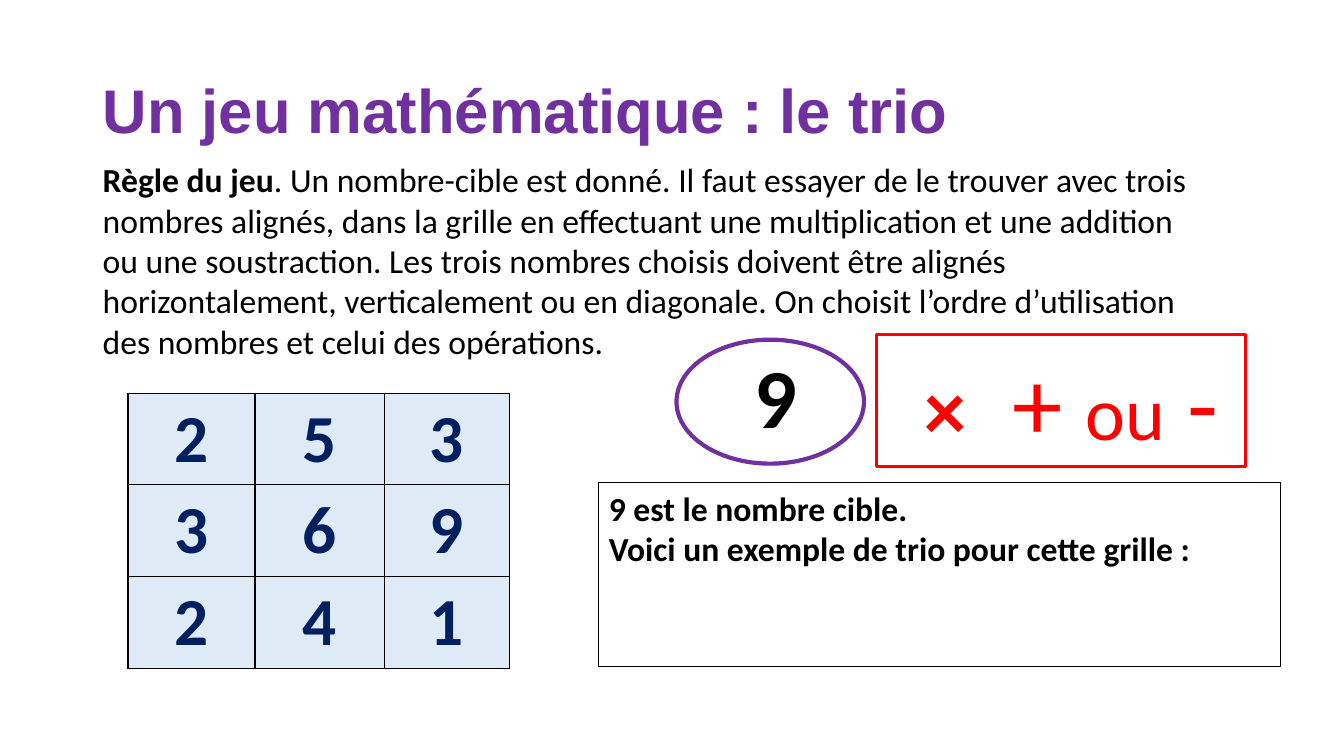
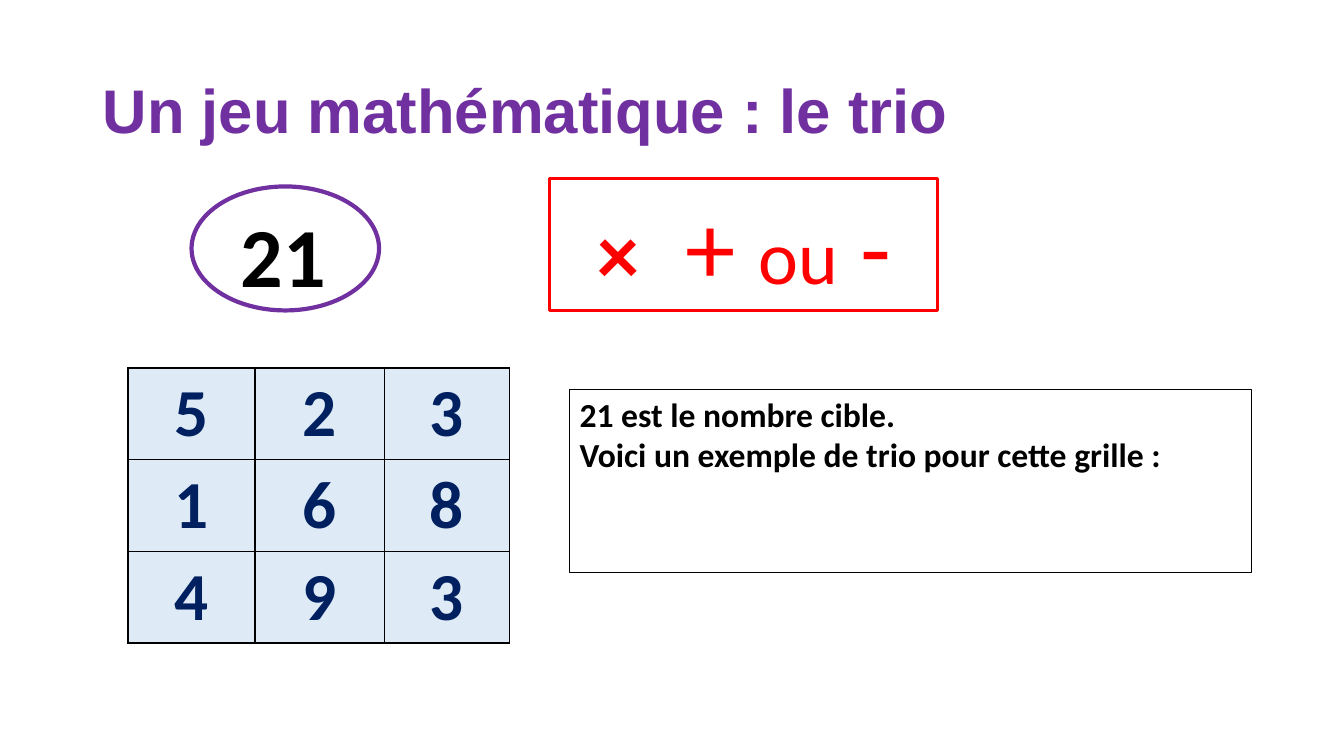
from dataclasses import dataclass

from lxml.etree import SubElement
from pptx import Presentation
from pptx.dml.color import RGBColor
from pptx.enum.shapes import MSO_SHAPE
from pptx.enum.text import MSO_ANCHOR, PP_ALIGN
from pptx.oxml.ns import qn
from pptx.util import Inches, Pt


@dataclass(frozen=True)
class Theme:
    purple: RGBColor = RGBColor(0x70, 0x30, 0xA0)
    navy: RGBColor = RGBColor(0x00, 0x20, 0x60)
    pale_blue: RGBColor = RGBColor(0xDE, 0xEB, 0xF7)
    red: RGBColor = RGBColor(0xFF, 0x00, 0x00)
    black: RGBColor = RGBColor(0x00, 0x00, 0x00)
    white: RGBColor = RGBColor(0xFF, 0xFF, 0xFF)
    title_font: str = "Arial"
    body_font: str = "Calibri"
    title_size: int = 44
    body_size: int = 24
    grid_size: int = 48
    target_size: int = 60
    times_size: int = 60
    sign_size: int = 72
    word_size: int = 54


THEME = Theme()
TITLE = "Un jeu mathématique : le trio"
RULE_NAME = "Règle du jeu"
RULE_TEXT = (
    ". Un nombre-cible est donné. Il faut essayer de le trouver avec trois "
    "nombres alignés, dans la grille en effectuant une multiplication et une "
    "addition ou une soustraction. Les trois nombres choisis doivent être "
    "alignés horizontalement, verticalement ou en diagonale. On choisit "
    "l’ordre d’utilisation des nombres et celui des opérations."
)
GRID_LEFT = 1.27
COLUMN_WIDTHS = (1.26, 1.28, 1.24)
ROW_HEIGHT = 0.91


def style(para, size, color=THEME.black, bold=False, font=THEME.body_font):
    para.font.name = font
    para.font.size = Pt(size)
    para.font.bold = bold
    para.font.color.rgb = color


def add_box(page, left, top, width, height, outline=None, line_width=0.75):
    """Add a wrapping text box, framed when an outline colour is given."""
    box = page.shapes.add_textbox(
        Inches(left), Inches(top), Inches(width), Inches(height))
    box.text_frame.word_wrap = True
    if outline is not None:
        box.line.color.rgb = outline
        box.line.width = Pt(line_width)
    return box


def add_title(page):
    frame = add_box(page, 0.92, 0.4, 11.5, 1.45).text_frame
    frame.vertical_anchor = MSO_ANCHOR.MIDDLE
    para = frame.paragraphs[0]
    para.text = TITLE
    para.line_spacing = 0.9
    style(para, THEME.title_size, THEME.purple, True, THEME.title_font)


def add_borders(cell):
    properties = cell._tc.get_or_add_tcPr()
    for position, side in enumerate(("lnL", "lnR", "lnT", "lnB")):
        line = SubElement(properties, qn(f"a:{side}"), w=str(Pt(1)))
        fill = SubElement(line, qn("a:solidFill"))
        SubElement(fill, qn("a:srgbClr"), val=str(THEME.black))
        properties.insert(position, line)


def add_grid(page, top, rows):
    table = page.shapes.add_table(
        len(rows), len(COLUMN_WIDTHS), Inches(GRID_LEFT), Inches(top),
        Inches(sum(COLUMN_WIDTHS)), Inches(ROW_HEIGHT * len(rows))).table
    table.first_row = table.horz_banding = False
    for column, width in zip(table.columns, COLUMN_WIDTHS):
        column.width = Inches(width)
    for row_index, numbers in enumerate(rows):
        table.rows[row_index].height = Inches(ROW_HEIGHT)
        for column_index, number in enumerate(numbers):
            cell = table.cell(row_index, column_index)
            cell.fill.solid()
            cell.fill.fore_color.rgb = THEME.pale_blue
            add_borders(cell)
            para = cell.text_frame.paragraphs[0]
            para.text = str(number)
            para.alignment = PP_ALIGN.CENTER
            style(para, THEME.grid_size, THEME.navy, True)


def add_example(page, left, top, target):
    frame = add_box(page, left, top, 6.76, 1.82, THEME.black).text_frame
    frame.text = (f"{target} est le nombre cible.\n"
                  "Voici un exemple de trio pour cette grille :")
    for para in frame.paragraphs:
        style(para, THEME.body_size, bold=True)


def add_target(page, oval_at, number_at, target):
    oval = page.shapes.add_shape(
        MSO_SHAPE.OVAL, *map(Inches, oval_at), Inches(1.86), Inches(1.23))
    oval.shadow.inherit = False
    oval.fill.solid()
    oval.fill.fore_color.rgb = THEME.white
    oval.line.color.rgb = THEME.purple
    oval.line.width = Pt(3)
    frame = add_box(page, *number_at, 2.13, 1.11).text_frame
    frame.margin_left = Inches(0.29)
    para = frame.paragraphs[0]
    para.text = str(target)
    style(para, THEME.target_size, bold=True)


def add_rule(page):
    para = add_box(page, 0.92, 1.53, 11.15, 2.12).text_frame.paragraphs[0]
    style(para, THEME.body_size)
    for text, bold in ((RULE_NAME, True), (RULE_TEXT, False)):
        span = para.add_run()
        span.text = text
        span.font.bold = bold


def add_operations(page, left, top, width):
    frame = add_box(page, left, top, width, 1.31, THEME.red, 2).text_frame
    frame.margin_left = Inches(0.48)
    para = frame.paragraphs[0]
    style(para, THEME.sign_size, THEME.red)
    tabs = SubElement(para._p.get_or_add_pPr(), qn("a:tabLst"))
    SubElement(tabs, qn("a:tab"), pos=str(Inches(0.87)), algn="l")
    para._p.pPr.insert(0, tabs)
    for text, size, bold in (
        ("×", THEME.times_size, True),
        ("\t+ ", THEME.sign_size, False),
        ("ou", THEME.word_size, False),
        (" -", THEME.sign_size, False),
    ):
        span = para.add_run()
        span.text = text
        span.font.size = Pt(size)
        span.font.bold = bold


def add_page(deck):
    page = deck.slides.add_slide(deck.slide_layouts[6])
    add_title(page)
    return page


def main():
    deck = Presentation()
    deck.slide_width, deck.slide_height = Inches(13.33), Inches(7.5)

    page = add_page(deck)
    add_grid(page, 3.9, ((2, 5, 3), (3, 6, 9), (2, 4, 1)))
    add_example(page, 5.94, 4.79, 9)
    add_target(page, (6.71, 3.37), (7.19, 3.37), 9)
    add_rule(page)
    add_operations(page, 8.69, 3.32, 3.66)

    page = add_page(deck)
    add_grid(page, 3.65, ((5, 2, 3), (1, 6, 8), (4, 9, 3)))
    add_example(page, 5.65, 3.86, 21)
    add_target(page, (1.9, 1.85), (2.1, 1.97), 21)
    add_operations(page, 5.45, 1.77, 3.85)

    deck.save("out.pptx")


if __name__ == "__main__":
    main()
